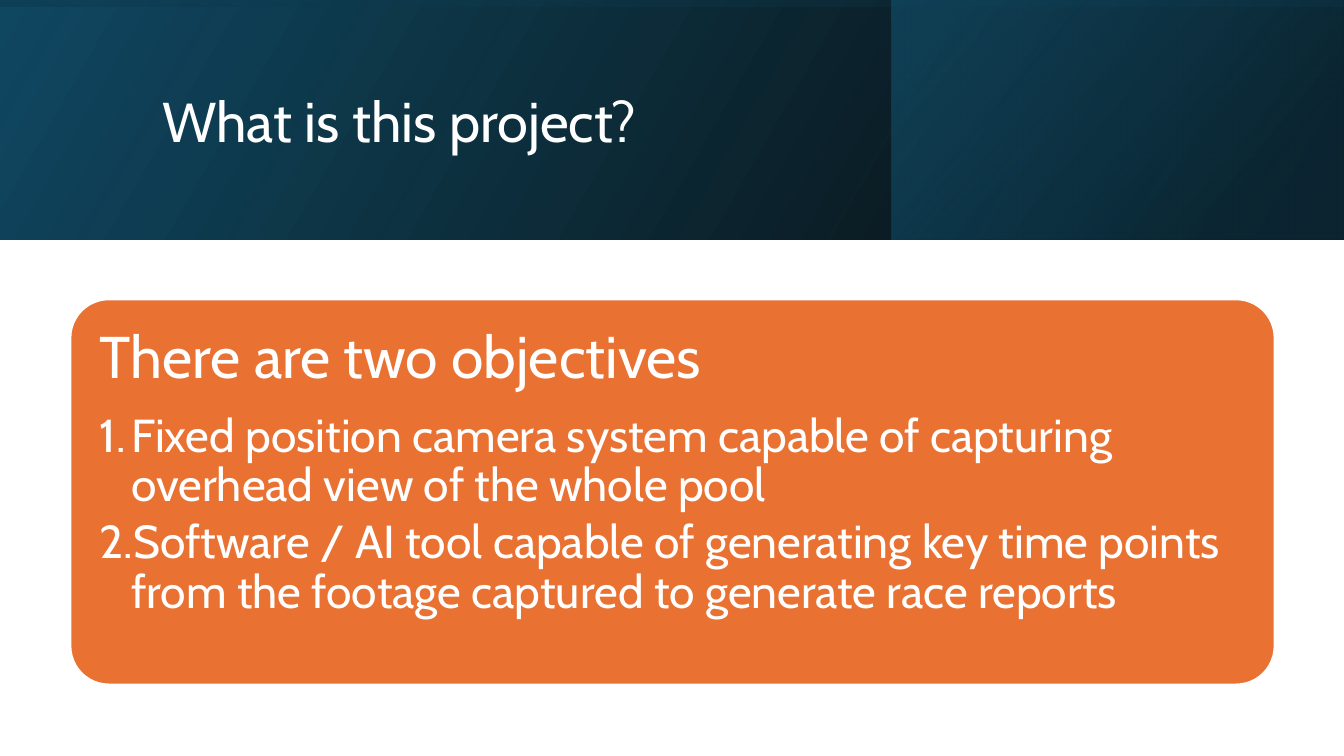
"""Build the project overview slide with its gradient banner and objectives card."""
from typing import NamedTuple

from lxml import etree
from pptx import Presentation
from pptx import util as u
from pptx.dml.color import RGBColor
from pptx.enum import shapes, text
from pptx.oxml import parse_xml
from pptx.oxml.ns import nsdecls, qn

PX = 9525
FONT = "Cabin"
WHITE = "FFFFFF"
ORANGE = "E97132"


class Box(NamedTuple):
    left: int
    top: int
    width: int
    height: int


class Stop(NamedTuple):
    position: int
    colour: str
    opacity: int


class Banner(NamedTuple):
    box: Box
    stops: tuple[Stop, ...]
    angle: int
    rotation: int = 0


class Line(NamedTuple):
    words: str
    size: int
    space_after: int
    indent: int = 0


BANNERS = (
    Banner(Box(0, 0, 1280, 228), (Stop(0, "000000", 96), Stop(100, "104862", 100)), 330),
    Banner(Box(849, 0, 430, 228), (Stop(19, "0B3041", 68), Stop(100, "156082", 48)), 320),
    Banner(Box(526, -526, 228, 1280), (Stop(23, "104862", 16), Stop(99, "000000", 45)), 350, 270),
)
OBJECTIVES = (
    Line("There are two objectives", 42, 15),
    Line("Fixed position camera system capable of capturing overhead view of the whole pool", 33, 5, 30),
    Line("Software / AI tool capable of generating key time points from the footage captured "
         "to generate race reports", 33, 5, 30),
)


def rgb(colour: str) -> RGBColor:
    return RGBColor.from_string(colour)


def place(shape, box: Box) -> None:
    shape.left, shape.top, shape.width, shape.height = (u.Emu(side * PX) for side in box)


def add_panel(slide, kind, box: Box):
    panel = slide.shapes.add_shape(kind, *(u.Emu(side * PX) for side in box))
    panel.shadow.inherit = False
    return panel


def add_banner(slide, banner: Banner) -> None:
    panel = add_panel(slide, shapes.MSO_SHAPE.RECTANGLE, banner.box)
    panel.line.fill.background()
    panel.rotation = banner.rotation
    properties = panel.element.spPr
    properties.find(qn("a:xfrm")).set("flipH", "1")
    stops = "".join(
        f'<a:gs pos="{stop.position * 1000}"><a:srgbClr val="{stop.colour}">'
        f'<a:alpha val="{stop.opacity * 1000}"/></a:srgbClr></a:gs>'
        for stop in banner.stops
    )
    gradient = parse_xml(
        f'<a:gradFill {nsdecls("a")} rotWithShape="1"><a:gsLst>{stops}</a:gsLst>'
        f'<a:lin ang="{banner.angle * 60000}" scaled="0"/></a:gradFill>'
    )
    properties.find(qn("a:prstGeom")).addnext(gradient)


def add_card(slide, box: Box) -> None:
    card = add_panel(slide, shapes.MSO_SHAPE.ROUNDED_RECTANGLE, box)
    card.adjustments[0] = 0.1
    card.fill.solid()
    card.fill.fore_color.rgb = rgb(ORANGE)
    card.line.color.rgb = rgb(WHITE)
    card.line.width = u.Pt(1.5)


def bring_forward(shape) -> None:
    shape.element.getparent().append(shape.element)


def write(paragraph, line: Line) -> None:
    paragraph.text = line.words
    paragraph.alignment = text.PP_ALIGN.LEFT
    paragraph.line_spacing = 0.9
    paragraph.space_before = u.Pt(0)
    paragraph.space_after = u.Pt(line.space_after)
    for run in paragraph.runs:
        run.font.name = FONT
        run.font.size = u.Pt(line.size)
        run.font.color.rgb = rgb(WHITE)


def set_bullet(paragraph, indent: int) -> None:
    paragraph.level = 1 if indent else 0
    properties = paragraph._p.get_or_add_pPr()
    properties.set("marL", str(indent * PX))
    properties.set("indent", str(-indent * PX))
    if indent:
        etree.SubElement(properties, qn("a:buFont"), typeface="+mj-lt")
        etree.SubElement(properties, qn("a:buAutoNum"), type="arabicPeriod")
    else:
        etree.SubElement(properties, qn("a:buNone"))


def fill_title(title, box: Box) -> None:
    bring_forward(title)
    place(title, box)
    frame = title.text_frame
    frame.auto_size = text.MSO_AUTO_SIZE.NONE
    frame.vertical_anchor = text.MSO_ANCHOR.MIDDLE
    write(frame.paragraphs[0], Line("What is this project?", 40, 0))


def fill_objectives(body, box: Box) -> None:
    bring_forward(body)
    place(body, box)
    frame = body.text_frame
    frame.auto_size = text.MSO_AUTO_SIZE.NONE
    frame.vertical_anchor = text.MSO_ANCHOR.TOP
    frame.margin_left = frame.margin_right = u.Emu(16 * PX)
    frame.margin_top = frame.margin_bottom = u.Emu(16 * PX)
    for index, line in enumerate(OBJECTIVES):
        paragraph = frame.add_paragraph() if index else frame.paragraphs[0]
        set_bullet(paragraph, line.indent)
        write(paragraph, line)


def main() -> None:
    deck = Presentation()
    deck.slide_width, deck.slide_height = u.Emu(1280 * PX), u.Emu(720 * PX)
    slide = deck.slides.add_slide(deck.slide_layouts[1])
    for banner in BANNERS:
        add_banner(slide, banner)
    fill_title(slide.shapes.title, Box(145, 36, 1020, 165))
    add_card(slide, Box(67, 285, 1147, 367))
    fill_objectives(slide.placeholders[1], Box(79, 296, 1126, 345))
    deck.save("out.pptx")


if __name__ == "__main__":
    main()
